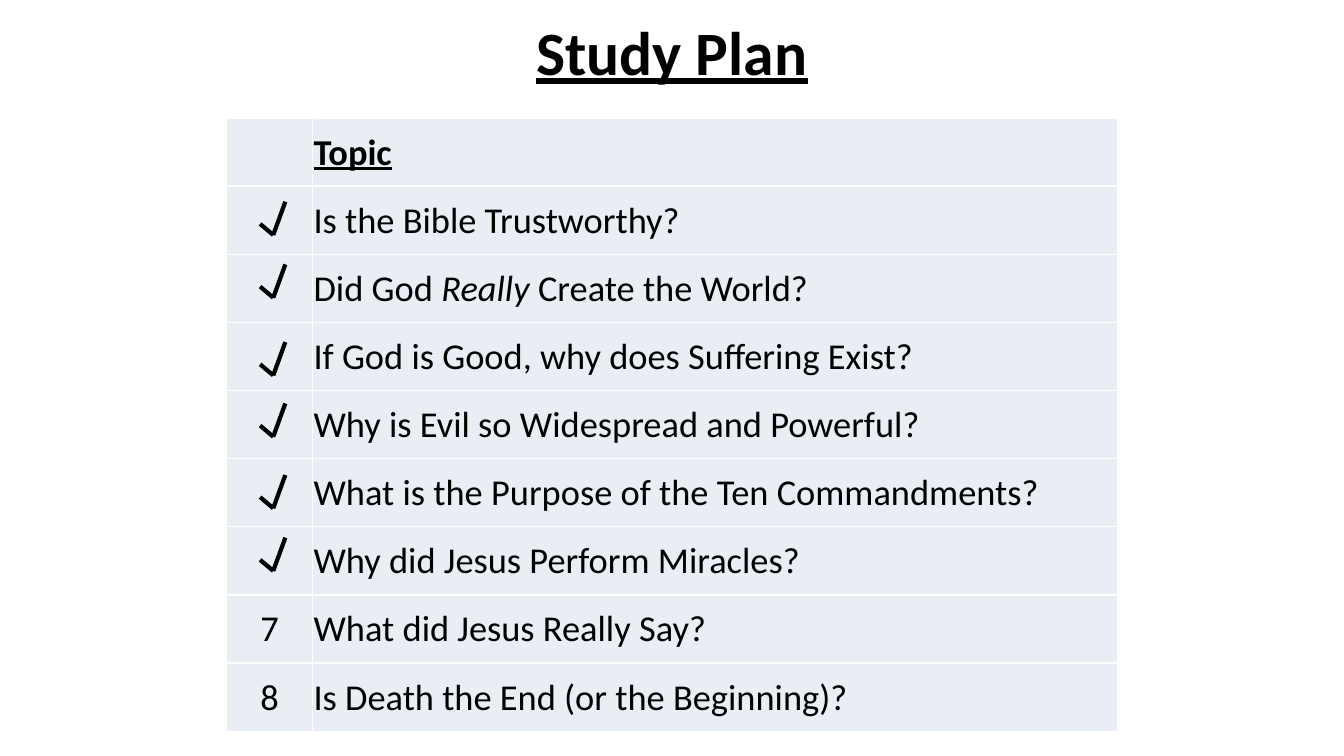
from dataclasses import dataclass

from lxml import etree
from pptx import Presentation
from pptx.dml.color import RGBColor
from pptx.enum.shapes import MSO_CONNECTOR
from pptx.enum.text import MSO_ANCHOR, PP_ALIGN
from pptx.oxml.ns import qn
from pptx.util import Inches, Pt

STRAIGHT = MSO_CONNECTOR.STRAIGHT
MIDDLE = MSO_ANCHOR.MIDDLE
LEFT, CENTER = PP_ALIGN.LEFT, PP_ALIGN.CENTER


@dataclass(frozen=True)
class Theme:
    """Colours, font and sizes of the slide."""
    font: str = "Calibri"
    ink: str = "000000"
    cell: str = "E9EDF4"
    border: str = "FFFFFF"
    title_size: int = 44
    body_size: int = 26
    tick_width: int = 3


THEME = Theme()
SLIDE_W, SLIDE_H = 13.33, 7.5
GRID_LEFT, GRID_TOP = 2.25, 1.17
COLS, ROW_H = (0.85, 7.98), 0.676
TICK_LEFT = 2.58
TICK_STROKES = (((0, 0.22), (0.13, 0.33)), ((0.13, 0.33), (0.25, 0)))
TICK_ROWS = (1.23, 2.15, 3.29, 4.19, 5.24, 6.16)
HEADING = {"bold": True, "underline": True}
PLAIN = {"bold": False, "underline": False}
ITALIC = {**PLAIN, "italic": True}
TOPICS = (
    ("", [("Topic", HEADING)]),
    ("", [("Is the Bible Trustworthy?", PLAIN)]),
    ("", [("Did God ", PLAIN), ("Really ", ITALIC), ("Create the World?", PLAIN)]),
    ("", [("If God is Good, why does Suffering Exist?", PLAIN)]),
    ("", [("Why is Evil so Widespread and Powerful?", PLAIN)]),
    ("", [("What is the Purpose of the Ten Commandments?", PLAIN)]),
    ("", [("Why did Jesus Perform Miracles?", PLAIN)]),
    ("7", [("What did Jesus Really Say?", PLAIN)]),
    ("8", [("Is Death the End (or the Beginning)?", PLAIN)]),
)


def set_attrs(obj, values):
    """Set each named attribute on an object."""
    for name, value in values.items():
        setattr(obj, name, value)


def write_runs(p, runs, size, align):
    """Write formatted runs into a paragraph."""
    p.alignment = align
    for text, style in runs:
        r = p.add_run()
        r.text = text
        set_attrs(r.font, {"name": THEME.font, "size": Pt(size), **style})
        r.font.color.rgb = RGBColor.from_string(THEME.ink)


def add_title(s, text):
    """Add the centred slide title."""
    w = 4.5
    sp = s.shapes.add_textbox(Inches((SLIDE_W - w) / 2), 0, Inches(w), Inches(1))
    tf = sp.text_frame
    set_attrs(tf, {"word_wrap": True, "vertical_anchor": MIDDLE})
    write_runs(tf.paragraphs[0], [(text, HEADING)], THEME.title_size, CENTER)


def style_cell(cell):
    """Give a cell its borders, fill, margins and anchor."""
    tc_pr = cell._tc.get_or_add_tcPr()
    for side in ("a:lnL", "a:lnR", "a:lnT", "a:lnB"):
        ln = etree.SubElement(tc_pr, qn(side), w=str(Pt(1)))
        fill = etree.SubElement(ln, qn("a:solidFill"))
        etree.SubElement(fill, qn("a:srgbClr"), val=THEME.border)
    cell.fill.solid()
    cell.fill.fore_color.rgb = RGBColor.from_string(THEME.cell)
    inset = Inches(0.01)
    set_attrs(cell, {"margin_left": inset, "margin_right": inset, "margin_top": inset,
                     "margin_bottom": 0, "vertical_anchor": MIDDLE})


def add_topics(s):
    """Add the table of numbered topics."""
    table = s.shapes.add_table(
        len(TOPICS), len(COLS), Inches(GRID_LEFT), Inches(GRID_TOP),
        Inches(sum(COLS)), Inches(ROW_H * len(TOPICS))).table
    set_attrs(table, {"first_row": False, "horz_banding": False})
    for col, width in zip(table.columns, COLS):
        col.width = Inches(width)
    for i, (number, topic) in enumerate(TOPICS):
        table.rows[i].height = Inches(ROW_H)
        number_runs = [(number, PLAIN)] if number else []
        for j, (runs, align) in enumerate(((number_runs, CENTER), (topic, LEFT))):
            cell = table.cell(i, j)
            style_cell(cell)
            write_runs(cell.text_frame.paragraphs[0], runs, THEME.body_size, align)


def add_tick(s, row):
    """Add a grouped check mark whose top is at a row position."""
    top = GRID_TOP + row * ROW_H
    group = s.shapes.add_group_shape()
    for (x1, y1), (x2, y2) in TICK_STROKES:
        sp = group.shapes.add_connector(
            STRAIGHT, Inches(TICK_LEFT + x1), Inches(top + y1),
            Inches(TICK_LEFT + x2), Inches(top + y2))
        sp.line.width = Pt(THEME.tick_width)
        sp.line.color.rgb = RGBColor.from_string(THEME.ink)
        etree.SubElement(sp._element.spPr, qn("a:effectLst"))


def main():
    """Build and save the study plan slide."""
    prs = Presentation()
    set_attrs(prs, {"slide_width": Inches(SLIDE_W), "slide_height": Inches(SLIDE_H)})
    s = prs.slides.add_slide(prs.slide_layouts[6])
    add_title(s, "Study Plan")
    add_topics(s)
    for row in TICK_ROWS:
        add_tick(s, row)
    prs.save("out.pptx")


if __name__ == "__main__":
    main()
